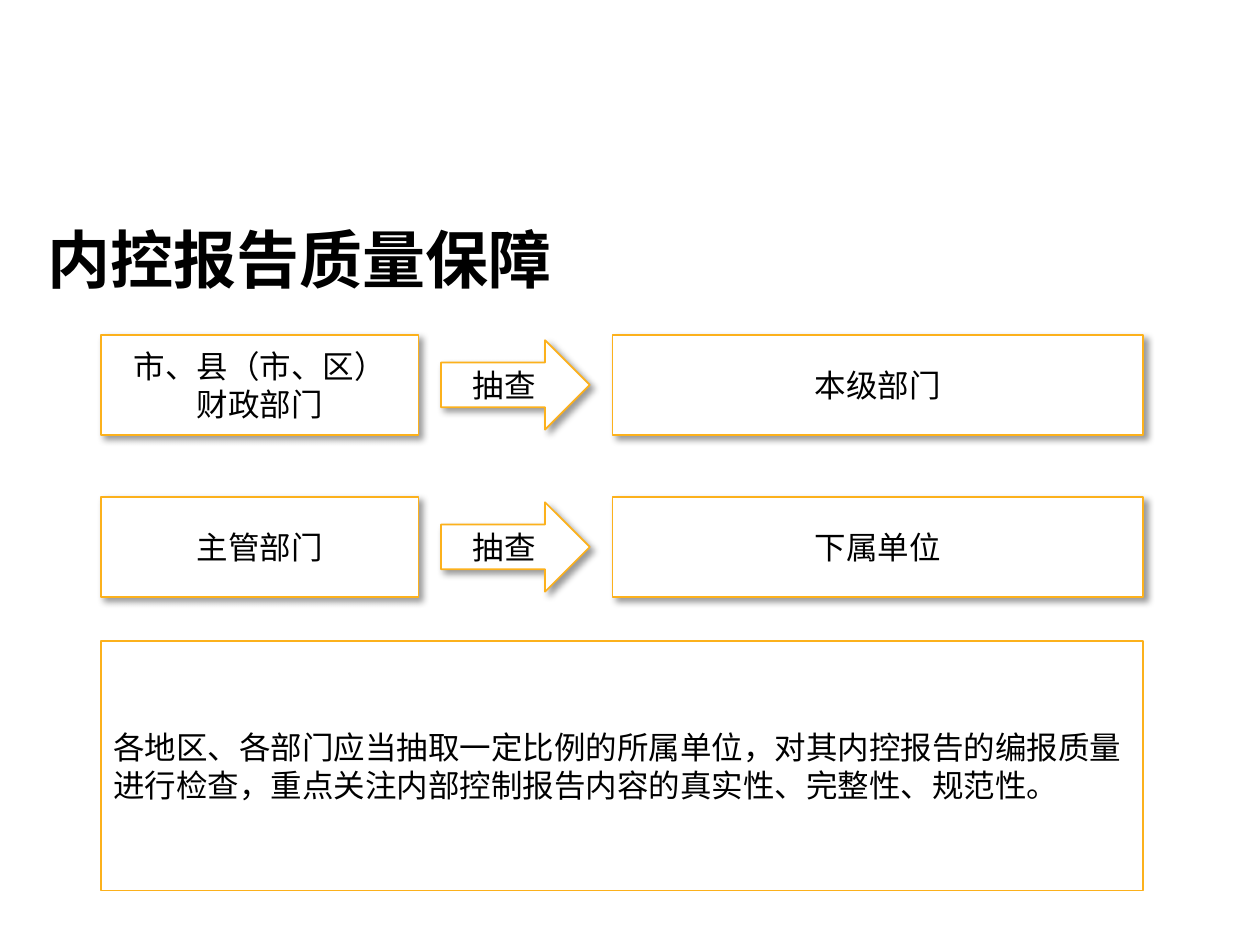
from lxml.etree import SubElement
from pptx import Presentation
from pptx.dml.color import RGBColor
from pptx.enum.shapes import MSO_SHAPE as Shape
from pptx.enum.text import MSO_ANCHOR as Anchor, MSO_AUTO_SIZE as AutoSize, PP_ALIGN as Align
from pptx.oxml.ns import qn
from pptx.util import Pt

BLACK = RGBColor(0x00, 0x00, 0x00)
WHITE = RGBColor(0xFF, 0xFF, 0xFF)
AMBER = RGBColor(0xFC, 0xB1, 0x1C)
FONT = "Noto Sans CJK SC"

LEFT, TARGET_LEFT, ARROW_LEFT = 57.6, 350, 252
SOURCE_WIDTH, TARGET_WIDTH, ARROW_WIDTH = 181.5, 303.2, 85
BOX_HEIGHT, ARROW_HEIGHT = 56.9, 51.1
FIRST_ROW, ROW_STEP = 191.5, 92.6
CHECKS = [
    (["市、县（市、区）", "财政部门"], "本级部门"),
    (["主管部门"], "下属单位"),
]


def write_lines(frame, lines, size, align, bold=False):
    """Write each line as a paragraph with one formatted run."""
    for index, line in enumerate(lines):
        paragraph = frame.add_paragraph() if index else frame.paragraphs[0]
        paragraph.alignment = align
        run = paragraph.add_run()
        run.text = line
        run.font.name = FONT
        run.font.size = Pt(size)
        run.font.bold = bold
        run.font.color.rgb = BLACK
        SubElement(run.font._element, qn("a:ea"), typeface=FONT)


def add_shadow(shape):
    """Give a shape a soft shadow to the lower right."""
    effects = shape._element.spPr.find(qn("a:effectLst"))
    shadow = SubElement(effects, qn("a:outerShdw"), blurRad=str(Pt(4)), dist=str(Pt(3)),
                        dir="2700000", algn="tl", rotWithShape="0")
    color = SubElement(shadow, qn("a:srgbClr"), val=str(BLACK))
    SubElement(color, qn("a:alpha"), val="40000")


def add_box(slide, kind, left, top, width, height, lines, align=Align.CENTER, shadow=True):
    """Add a white shape with an amber outline and text."""
    shape = slide.shapes.add_shape(kind, Pt(left), Pt(top), Pt(width), Pt(height))
    shape.shadow.inherit = False
    shape.fill.solid()
    shape.fill.fore_color.rgb = WHITE
    shape.line.color.rgb = AMBER
    shape.line.width = Pt(1)
    if shadow:
        add_shadow(shape)
    frame = shape.text_frame
    frame.word_wrap = True
    frame.vertical_anchor = Anchor.MIDDLE
    write_lines(frame, lines, 18, align)


def add_title(slide, text):
    """Add the bold slide title."""
    box = slide.shapes.add_textbox(Pt(20.2), Pt(122.4), Pt(669.6), Pt(51.1))
    box.fill.solid()
    box.fill.fore_color.rgb = WHITE
    frame = box.text_frame
    frame.word_wrap = True
    frame.auto_size = AutoSize.SHAPE_TO_FIT_TEXT
    write_lines(frame, [text], 36, Align.LEFT, bold=True)


def add_check(slide, top, source, target):
    """Add a row in which one department spot-checks another."""
    arrow_top = top + (BOX_HEIGHT - ARROW_HEIGHT) / 2
    add_box(slide, Shape.RIGHT_ARROW, ARROW_LEFT, arrow_top, ARROW_WIDTH, ARROW_HEIGHT, ["抽查"])
    add_box(slide, Shape.RECTANGLE, LEFT, top, SOURCE_WIDTH, BOX_HEIGHT, source)
    add_box(slide, Shape.RECTANGLE, TARGET_LEFT, top, TARGET_WIDTH, BOX_HEIGHT, [target])


def main():
    """Build and save the slide."""
    presentation = Presentation()
    presentation.slide_width, presentation.slide_height = Pt(720), Pt(540)
    slide = presentation.slides.add_slide(presentation.slide_layouts[6])
    add_title(slide, "内控报告质量保障")
    for row, (source, target) in enumerate(CHECKS):
        add_check(slide, FIRST_ROW + row * ROW_STEP, source, target)
    requirement = (
        "各地区、各部门应当抽取一定比例的所属单位，对其内控报告的编报质量进行检查，"
        "重点关注内部控制报告内容的真实性、完整性、规范性。"
    )
    add_box(slide, Shape.FLOWCHART_PROCESS, LEFT, 366.4, TARGET_LEFT + TARGET_WIDTH - LEFT, 142.5,
            [requirement], Align.LEFT, shadow=False)
    presentation.save("out.pptx")


if __name__ == "__main__":
    main()
